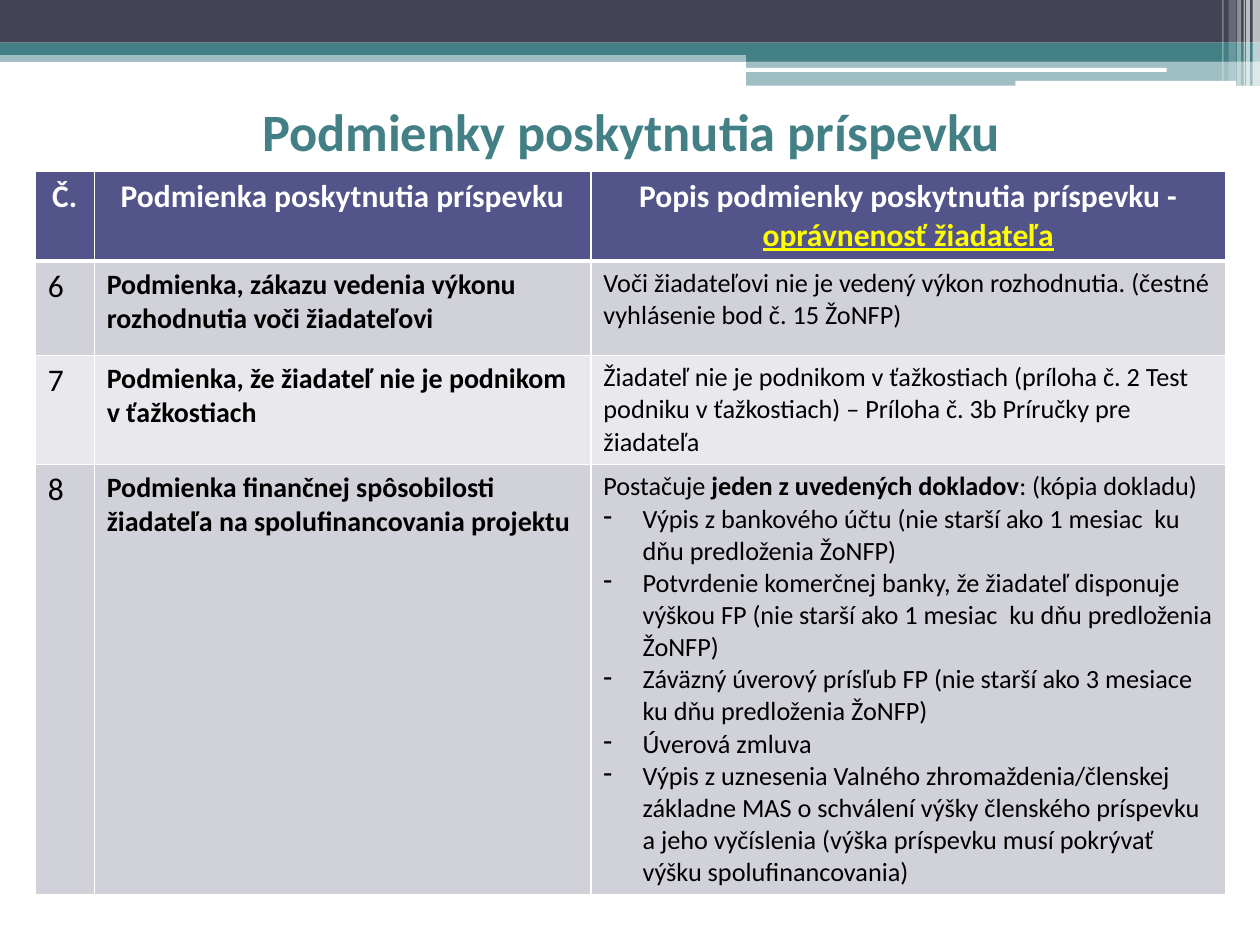
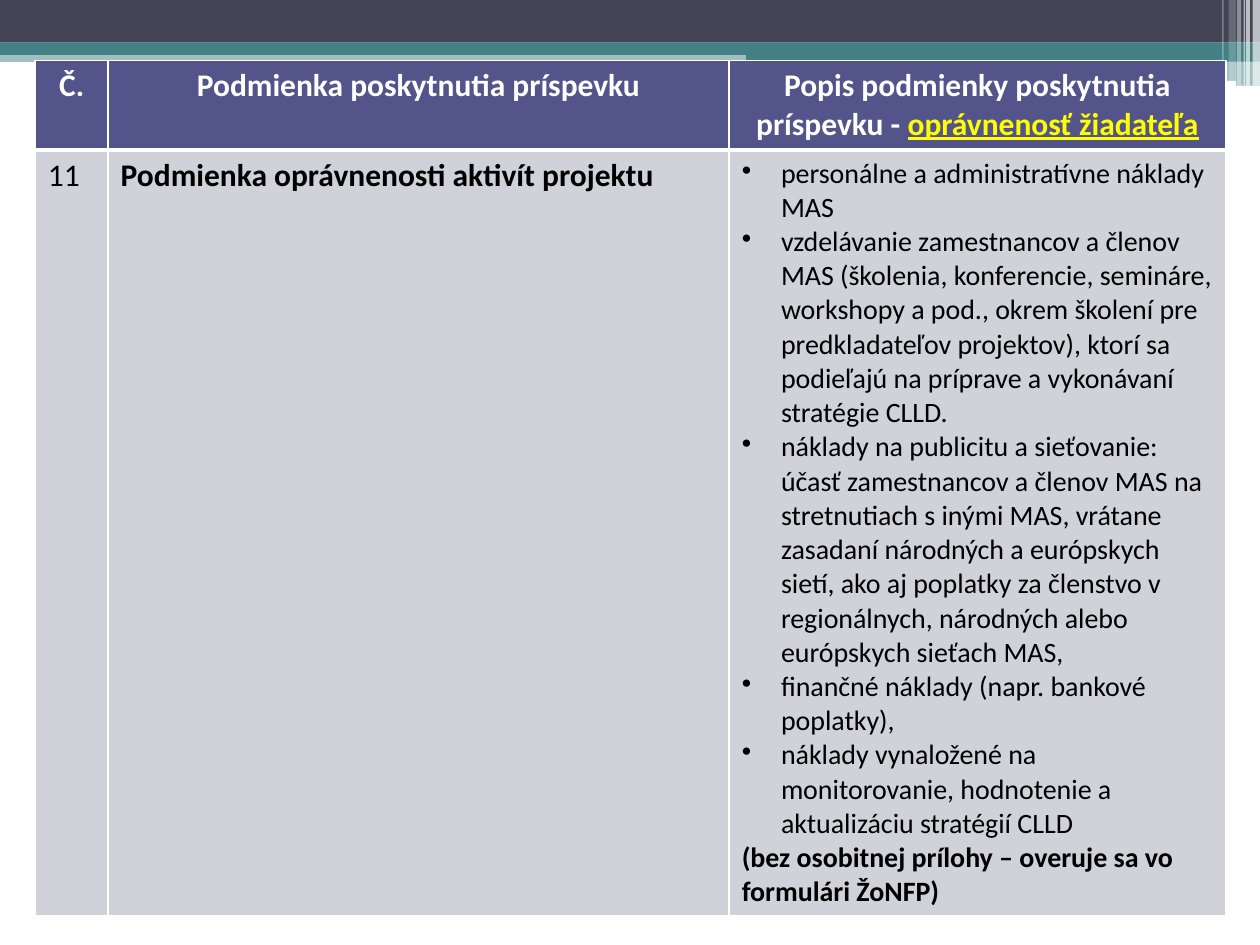
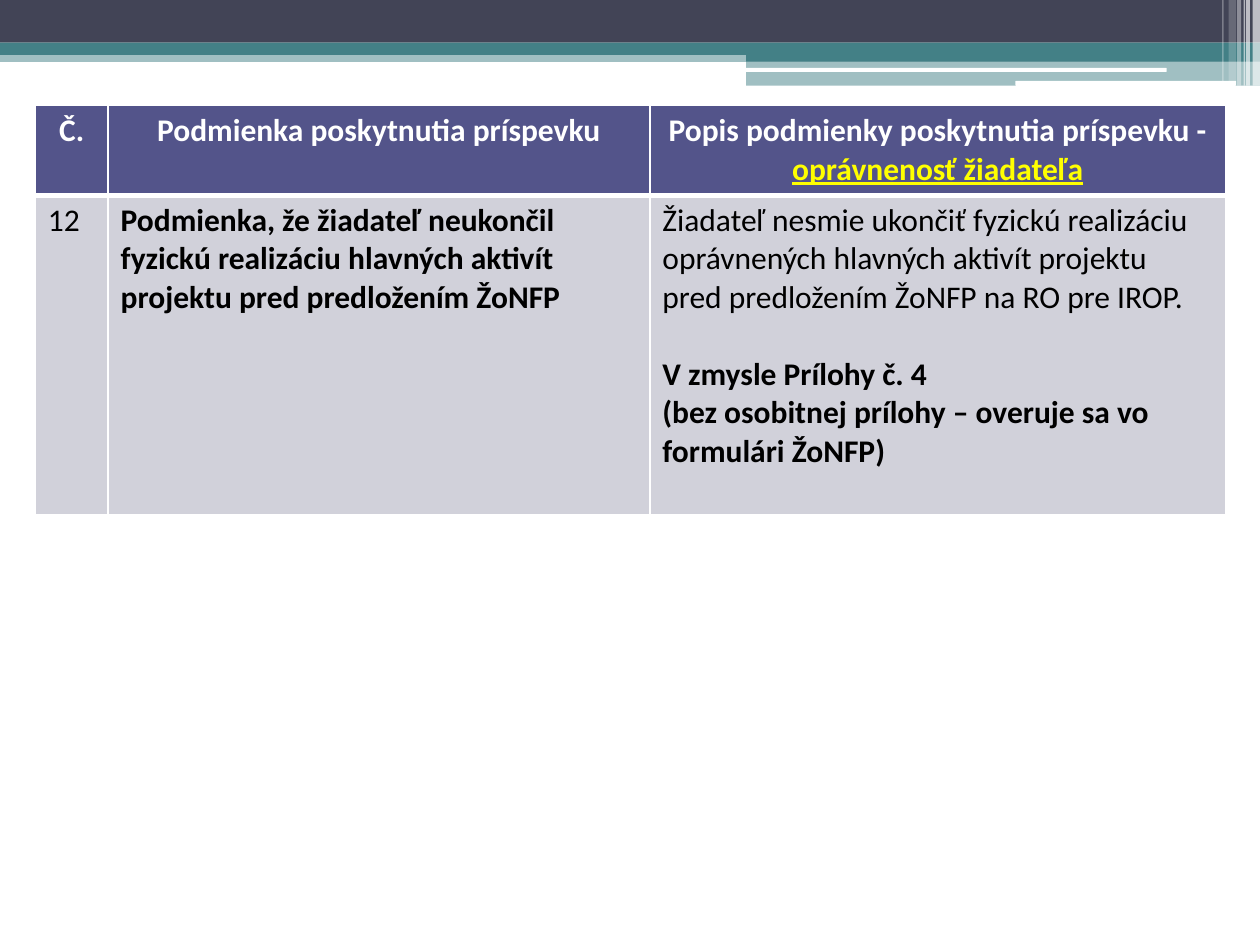
from dataclasses import dataclass

from lxml import etree
from pptx import Presentation
from pptx.dml.color import RGBColor
from pptx.enum.shapes import MSO_SHAPE
from pptx.enum.text import MSO_ANCHOR, MSO_AUTO_SIZE, PP_ALIGN
from pptx.oxml.ns import qn
from pptx.util import Cm, Pt

RECTANGLE = MSO_SHAPE.RECTANGLE
ROUNDED = MSO_SHAPE.ROUNDED_RECTANGLE
MIDDLE = MSO_ANCHOR.MIDDLE
NO_AUTOFIT = MSO_AUTO_SIZE.NONE
CENTER, LEFT = PP_ALIGN.CENTER, PP_ALIGN.LEFT
TITLE_ONLY, BLANK = 5, 6


@dataclass(frozen=True)
class Theme:
    font: str = "Calibri"
    teal: str = "438086"
    slate: str = "424456"
    white: str = "FFFFFF"
    black: str = "000000"
    header: str = "53548A"
    accent: str = "FFFF00"
    rows: tuple = ("D1D1DA", "E9E9ED")
    title_size: int = 30
    table_size: int = 18
    condition_size: int = 16
    detail_size: int = 15
    thin_border: int = 1
    thick_border: int = 3


THEME = Theme()

# left, top, width, height in cm, colour, opacity in percent, preset
BANDS = [
    (0, 1.02, 25.4, 0.23, THEME.teal, 50, RECTANGLE),
    (0, 0, 25.4, 0.86, THEME.slate, 100, RECTANGLE),
    (0, 0.86, 25.4, 0.25, THEME.teal, 100, RECTANGLE),
    (15.04, 0.99, 10.36, 0.25, THEME.teal, 100, RECTANGLE),
    (15.04, 1.22, 10.36, 0.51, THEME.teal, 50, RECTANGLE),
    (15.01, 1.37, 8.51, 0.08, THEME.white, 100, ROUNDED),
    (20.47, 1.63, 4.45, 0.1, THEME.white, 100, ROUNDED),
]
# left, width, height in cm, opacity in percent
STRIPES = [
    (25.25, 0.15, 1.73, 65),
    (25.12, 0.08, 1.73, 65),
    (25.07, 0.03, 1.73, 60),
    (24.94, 0.08, 1.73, 40),
    (24.77, 0.15, 1.63, 20),
    (24.64, 0.03, 1.63, 30),
]
TABLE_LEFT = 0.71
HEADER_HEIGHT = 1.78
BULLET_INDENT = Cm(0.79)


@dataclass(frozen=True)
class Span:
    text: str
    bold: bool = False
    color: str = THEME.black
    underline: bool = False


@dataclass(frozen=True)
class Para:
    spans: tuple
    bullet: str = ""
    space_before: int = 0


def plain(text, bold=False, bullet="", space_before=0):
    return Para((Span(text, bold),), bullet, space_before)


def bullets(mark, *texts):
    return [plain(text, bullet=mark) for text in texts]


def header_cells():
    number, condition = (
        [Para((Span(label, True, THEME.white),))]
        for label in ("Č.", "Podmienka poskytnutia príspevku"))
    description = [Para((
        Span("Popis podmienky poskytnutia príspevku - ", True, THEME.white),
        Span("oprávnenosť žiadateľa", True, THEME.accent, True)))]
    return number, condition, description


def style_run(run, size, color, bold, underline=False):
    font = run.font
    font.name, font.size = THEME.font, Pt(size)
    font.bold, font.underline = bold, underline
    font.color.rgb = RGBColor.from_string(color)


def set_bullet(paragraph, mark):
    properties = paragraph._p.get_or_add_pPr()
    properties.set("marL", str(BULLET_INDENT))
    properties.set("indent", str(-BULLET_INDENT))
    etree.SubElement(properties, qn("a:buChar")).set("char", mark)


def set_border(cell, side, width, position):
    """Put a white line on one cell side; position keeps the schema order."""
    line = etree.Element(qn(f"a:ln{side}"), w=str(Pt(width)))
    fill = etree.SubElement(line, qn("a:solidFill"))
    etree.SubElement(fill, qn("a:srgbClr")).set("val", THEME.white)
    cell._tc.get_or_add_tcPr().insert(position, line)


def fill_cell(cell, paras, size, color, align, borders):
    cell.fill.solid()
    cell.fill.fore_color.rgb = RGBColor.from_string(color)
    for position, (side, width) in enumerate(borders.items()):
        set_border(cell, side, width, position)
    frame = cell.text_frame
    for index, para in enumerate(paras):
        paragraph = frame.add_paragraph() if index else frame.paragraphs[0]
        paragraph.alignment = align
        if para.space_before:
            paragraph.space_before = Pt(para.space_before)
        if para.bullet:
            set_bullet(paragraph, para.bullet)
        for span in para.spans:
            run = paragraph.add_run()
            run.text = span.text
            style_run(run, size, span.color, span.bold, span.underline)


def add_conditions(slide, top, widths, heights, conditions,
                   condition_size=THEME.table_size, detail_size=THEME.table_size):
    """Add the table; each condition is number, name and detail paragraphs."""
    heights = [HEADER_HEIGHT, *heights]
    table = slide.shapes.add_table(
        len(heights), len(widths), Cm(TABLE_LEFT), Cm(top),
        Cm(sum(widths)), Cm(sum(heights))).table
    for column, width in zip(table.columns, widths):
        column.width = Cm(width)
    for row, height in zip(table.rows, heights):
        row.height = Cm(height)

    thin, thick = THEME.thin_border, THEME.thick_border
    for column, paras in enumerate(header_cells()):
        fill_cell(table.cell(0, column), paras, THEME.table_size, THEME.header,
                  CENTER, {"L": thin, "R": thin, "T": thin, "B": thick})
    sizes = (THEME.table_size, condition_size, detail_size)
    for row, (number, name, details) in enumerate(conditions, start=1):
        color = THEME.rows[(row - 1) % len(THEME.rows)]
        contents = ([plain(number)], [plain(name, bold=True)], details)
        for column, (paras, size) in enumerate(zip(contents, sizes)):
            fill_cell(table.cell(row, column), paras, size, color, LEFT,
                      {"L": thin, "R": thin, "B": thin})


def add_band(slide, left, top, width, height, color, opacity, preset):
    band = slide.shapes.add_shape(preset, Cm(left), Cm(top), Cm(width), Cm(height))
    band.shadow.inherit = False
    band.line.fill.background()
    band.fill.solid()
    band.fill.fore_color.rgb = RGBColor.from_string(color)
    if opacity < 100:
        tint = band.element.spPr.find(f".//{qn('a:srgbClr')}")
        etree.SubElement(tint, qn("a:alpha")).set("val", str(opacity * 1000))
    return band


def decorate_master(slide):
    """Draw the bands on a slide, then move them behind all on its master."""
    master_tree = slide.slide_layout.slide_master.shapes.element
    stripes = [(left, 0, width, height, THEME.white, opacity, RECTANGLE)
               for left, width, height, opacity in STRIPES]
    for index, band_data in enumerate(BANDS + stripes):
        band = add_band(slide, *band_data)
        band.element.nvSpPr.cNvPr.set("id", str(100 + index))
        master_tree.insert(2 + index, band.element)


def set_title(slide, text):
    title = slide.shapes.title
    title.left, title.top = Cm(1.3), Cm(1.93)
    title.width, title.height = Cm(22.86), Cm(1.4)
    frame = title.text_frame
    frame.text = text
    frame.auto_size = NO_AUTOFIT
    frame.vertical_anchor = MIDDLE
    paragraph = frame.paragraphs[0]
    paragraph.alignment = CENTER
    style_run(paragraph.runs[0], THEME.title_size, THEME.teal, True)


def build_applicant_slide(slide):
    set_title(slide, "Podmienky poskytnutia príspevku")
    documents = bullets(
        "-",
        "Výpis z bankového účtu (nie starší ako 1 mesiac  ku dňu predloženia ŽoNFP)",
        "Potvrdenie komerčnej banky, že žiadateľ disponuje výškou FP "
        "(nie starší ako 1 mesiac  ku dňu predloženia ŽoNFP)",
        "Záväzný úverový prísľub FP (nie starší ako 3 mesiace ku dňu predloženia ŽoNFP)",
        "Úverová zmluva",
        "Výpis z uznesenia Valného zhromaždenia/členskej základne MAS o schválení "
        "výšky členského príspevku a jeho vyčíslenia (výška príspevku musí pokrývať "
        "výšku spolufinancovania)")
    proof = Para((Span("Postačuje "), Span("jeden z uvedených dokladov", True),
                  Span(": (kópia dokladu)")))
    add_conditions(slide, 3.46, (1.19, 10.01, 12.8), (1.9, 2.2, 8.66), [
        ("6", "Podmienka, zákazu vedenia výkonu rozhodnutia voči žiadateľovi",
         [plain("Voči žiadateľovi nie je vedený výkon rozhodnutia. "
                "(čestné vyhlásenie bod č. 15 ŽoNFP)")]),
        ("7", "Podmienka, že žiadateľ nie je podnikom v ťažkostiach",
         [plain("Žiadateľ nie je podnikom v ťažkostiach (príloha č. 2 Test podniku "
                "v ťažkostiach) – Príloha č. 3b Príručky pre žiadateľa")]),
        ("8", "Podmienka finančnej spôsobilosti žiadateľa na spolufinancovania projektu",
         [proof, *documents]),
    ], THEME.condition_size, THEME.detail_size)


def build_activities_slide(slide, form_note):
    costs = bullets(
        "•",
        "personálne a administratívne náklady MAS",
        "vzdelávanie zamestnancov a členov MAS (školenia, konferencie, semináre, "
        "workshopy a pod., okrem školení pre predkladateľov projektov), ktorí sa "
        "podieľajú na príprave a vykonávaní stratégie CLLD.",
        "náklady na publicitu a sieťovanie: účasť zamestnancov a členov MAS na "
        "stretnutiach s inými MAS, vrátane zasadaní národných a európskych sietí, "
        "ako aj poplatky za členstvo v regionálnych, národných alebo európskych "
        "sieťach MAS,",
        "finančné náklady (napr. bankové poplatky),",
        "náklady vynaložené na monitorovanie, hodnotenie a aktualizáciu stratégií CLLD")
    add_conditions(slide, 1.22, (1.47, 12.52, 10.01), (15.44,), [
        ("11", "Podmienka oprávnenosti aktivít projektu", [*costs, form_note]),
    ], detail_size=THEME.condition_size)


def build_completion_slide(slide, form_note):
    add_conditions(slide, 2.13, (1.47, 10.92, 11.61), (6.45,), [
        ("12", "Podmienka, že žiadateľ neukončil fyzickú realizáciu hlavných aktivít "
         "projektu pred predložením ŽoNFP",
         [plain("Žiadateľ nesmie ukončiť fyzickú realizáciu  oprávnených hlavných "
                "aktivít projektu pred predložením ŽoNFP na RO pre IROP."),
          plain("V zmysle Prílohy č. 4", bold=True, space_before=22),
          form_note]),
    ])


def main():
    deck = Presentation()
    deck.slide_width, deck.slide_height = Cm(25.4), Cm(19.05)
    applicant, activities, completion = (
        deck.slides.add_slide(deck.slide_layouts[layout])
        for layout in (TITLE_ONLY, BLANK, BLANK))
    decorate_master(applicant)
    form_note = plain("(bez osobitnej prílohy – overuje sa vo formulári ŽoNFP)", bold=True)
    build_applicant_slide(applicant)
    build_activities_slide(activities, form_note)
    build_completion_slide(completion, form_note)
    deck.save("out.pptx")


if __name__ == "__main__":
    main()
